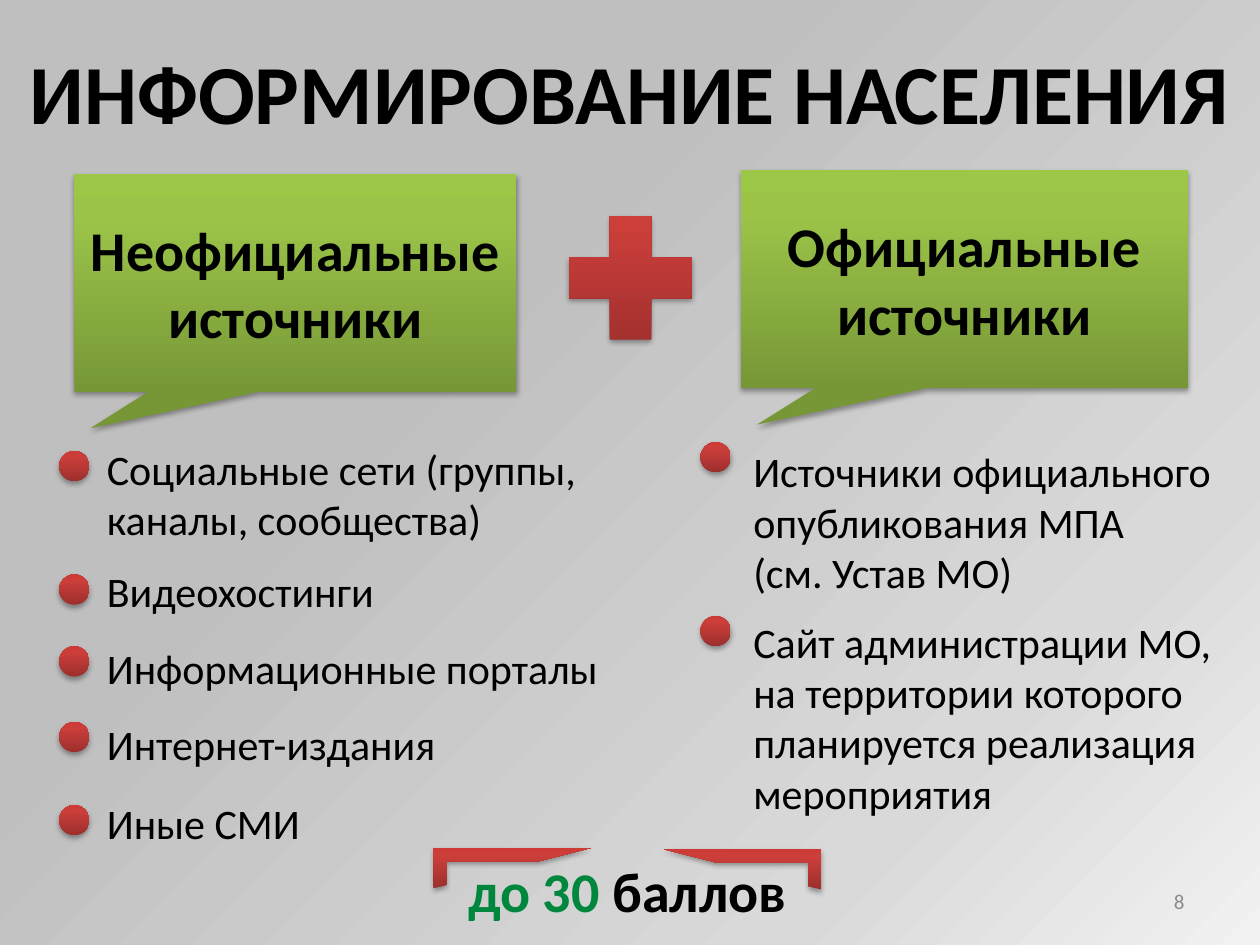
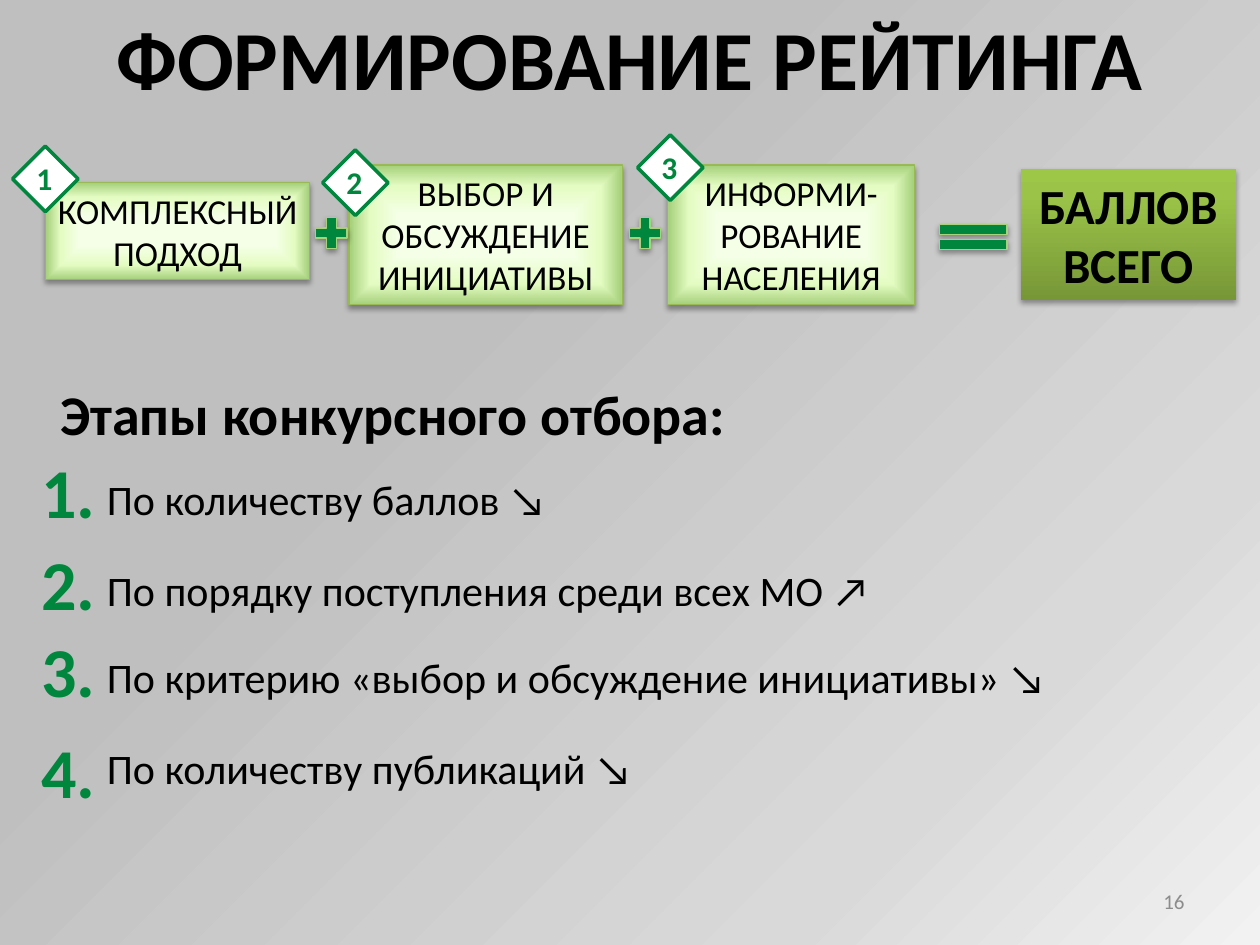
from lxml import etree
from pptx import Presentation
from pptx.dml.color import RGBColor
from pptx.enum.shapes import MSO_SHAPE as Shape
from pptx.enum.text import MSO_ANCHOR as Anchor, MSO_AUTO_SIZE as AutoSize, PP_ALIGN as Align
from pptx.oxml import parse_xml
from pptx.oxml.ns import nsdecls, qn
from pptx.util import Inches, Pt

WIDTH, HEIGHT = Inches(10), Inches(7.5)
COLUMNS, ROWS = 100, 75
FONT = "Calibri"

COLORS = {
    "ink": "000000",
    "green": "00863D",
    "page_number": "8C8C8C",
    "white": "FFFFFF",
    "leaf_edge": "98B955",
    "sign_edge": "A7D17D",
}

LINEAR = '<a:lin ang="16200000" scaled="0"/>'
RADIAL = '<a:path path="{}"><a:fillToRect {}/></a:path>'
GRADIENTS = {
    "page": ([(0, "F2F2F2"), (22, "D9D9D9"), (65, "BFBFBF")],
             RADIAL.format("circle", 'l="100000" t="100000"')),
    "red": ([(0, "9C2F2D"), (80, "CB3E3A"), (100, "CE3B37")], LINEAR),
    "olive": ([(0, "779737"), (80, "9BC348"), (100, "9DC746")], LINEAR),
    "leaf": ([(29, "F5FFE7"), (70, "E4FCC2"), (99, "A7D17D")],
             RADIAL.format("rect", 'l="50000" t="50000" r="50000" b="50000"')),
}

FORMATS = {
    "title": {"size": Pt(48), "bold": True},
    "heading": {"size": Pt(32), "bold": True},
    "total": {"size": Pt(28), "bold": True},
    "body": {"size": Pt(24), "bold": False},
    "criterion": {"size": Pt(20), "bold": False},
    "stage": {"size": Pt(40), "bold": True},
    "badge": {"size": Pt(18), "bold": True},
    "page_number": {"size": Pt(12), "bold": False},
}


def set_all(target, values):
    for name, value in values.items():
        setattr(target, name, value)


class Deck:
    def __init__(self):
        self.file = Presentation()
        set_all(self.file, {"slide_width": WIDTH, "slide_height": HEIGHT})
        self.slide = None

    def place(self, left, top, width, height):
        """Turn grid columns and rows into lengths."""
        column, row = WIDTH / COLUMNS, HEIGHT / ROWS
        return [round(n) for n in (left * column, top * row, width * column, height * row)]

    def paint_gradient(self, solid_fill, name):
        """Put a named gradient in the place of a solid fill."""
        stops, direction = GRADIENTS[name]
        marks = "".join(f'<a:gs pos="{pos * 1000}"><a:srgbClr val="{color}"/></a:gs>'
                        for pos, color in stops)
        gradient = parse_xml(f'<a:gradFill {nsdecls("a")} rotWithShape="1">'
                             f'<a:gsLst>{marks}</a:gsLst>{direction}</a:gradFill>')
        solid_fill.getparent().replace(solid_fill, gradient)

    def new_slide(self, title, title_top, number):
        self.slide = self.file.slides.add_slide(self.file.slide_layouts[5])
        self.slide.background.fill.solid()
        self.paint_gradient(self.slide.element.xpath(".//p:bgPr/a:solidFill")[0], "page")
        heading = self.slide.shapes.title
        left, top, width, height = self.place(0, title_top, 100, 9.1)
        set_all(heading, {"left": left, "top": top, "width": width, "height": height})
        self.set_text(heading.text_frame, title, "title", align=Align.CENTER)
        self.text((71.7, 69.5, 23.3, 4), str(number), "page_number", "page_number",
                  Align.RIGHT, vertical_anchor=Anchor.MIDDLE)

    def set_text(self, frame, content, style, color="ink", align=Align.LEFT, **frame_values):
        """Fill a frame; content is lines of text, or (text, color) runs of one line."""
        set_all(frame, {"word_wrap": True, "auto_size": AutoSize.NONE,
                        "vertical_anchor": Anchor.TOP, **frame_values})
        if isinstance(content, str):
            lines = [[(line, color)] for line in content.split("\n")]
        else:
            lines = [content]
        for index, runs in enumerate(lines):
            paragraph = frame.add_paragraph() if index else frame.paragraphs[0]
            paragraph.alignment = align
            for words, run_color in runs:
                run = paragraph.add_run()
                run.text = words
                set_all(run.font, {"name": FONT, **FORMATS[style]})
                run.font.color.rgb = RGBColor.from_string(COLORS[run_color])

    def text(self, box, content, style, color="ink", align=Align.LEFT, **frame_values):
        label = self.slide.shapes.add_textbox(*self.place(*box))
        self.set_text(label.text_frame, content, style, color, align, **frame_values)
        return label

    def shape(self, kind, box, fill, line=None, line_width=0.75, shadow=True,
              adjust=(), flip=False):
        figure = self.slide.shapes.add_shape(kind, *self.place(*box))
        for index, value in enumerate(adjust):
            figure.adjustments[index] = value
        figure.fill.solid()
        if fill in GRADIENTS:
            self.paint_gradient(figure.element.xpath("p:spPr/a:solidFill")[0], fill)
        else:
            figure.fill.fore_color.rgb = RGBColor.from_string(COLORS[fill])
        if line:
            figure.line.color.rgb = RGBColor.from_string(COLORS[line])
            figure.line.width = Pt(line_width)
        else:
            figure.line.fill.background()
        figure.shadow.inherit = False
        if shadow:
            self.add_shadow(figure)
        if flip:
            figure.element.xpath("p:spPr/a:xfrm")[0].set("flipH", "1")
        return figure

    def add_shadow(self, figure):
        effects = figure.element.xpath("p:spPr/a:effectLst")[0]
        outer = etree.SubElement(effects, qn("a:outerShdw"), blurRad=str(Pt(3.1)),
                                 dist=str(Pt(1.8)), dir="5400000", rotWithShape="0")
        black = etree.SubElement(outer, qn("a:srgbClr"), val=COLORS["ink"])
        etree.SubElement(black, qn("a:alpha"), val="35000")

    def panel(self, kind, box, content, style, fill, **look):
        """A filled shape with centred text."""
        figure = self.shape(kind, box, fill, **look)
        inset = Inches(0.05)
        self.set_text(figure.text_frame, content, style, align=Align.CENTER,
                      vertical_anchor=Anchor.MIDDLE, margin_left=inset, margin_right=inset)

    def bullet(self, left, top):
        self.shape(Shape.OVAL, (left, top, 2.4, 2.4), "red")

    def sign(self, kind, left, top, width):
        self.shape(kind, (left, top, width, 3.4), "green", line="sign_edge")

    def badge(self, left, top, number):
        diamond = self.shape(Shape.DIAMOND, (left, top, 5.2, 5.2), "white",
                             line="green", line_width=2, shadow=False)
        digit = self.text((left + 0.9, top + 0.55, 3.3, 4), str(number), "badge",
                          "green", word_wrap=False)
        self.slide.shapes.add_group_shape([diamond, digit])


def build_informing(deck):
    deck.new_slide("ИНФОРМИРОВАНИЕ НАСЕЛЕНИЯ", 2.7, 8)
    deck.shape(Shape.MATH_PLUS, (43.4, 15.4, 13.3, 13.3), "red", adjust=[0.246])
    for box, sources in [((58.8, 13.5, 35.5, 17.3), "Официальные\nисточники"),
                         ((5.9, 13.8, 35.1, 17.3), "Неофициальные\nисточники")]:
        deck.panel(Shape.RECTANGULAR_CALLOUT, box, sources, "heading", "olive",
                   adjust=[-0.464, 0.668])

    unofficial = [
        (35.8, 34.7, "Социальные сети (группы, каналы, сообщества)"),
        (45.6, 44.4, "Видеохостинги"),
        (51.3, 50.5, "Информационные порталы"),
        (57.3, 56.5, "Интернет-издания"),
        (63.9, 62.8, "Иные СМИ"),
    ]
    official = [
        (35.1, 34.9, "Источники официального опубликования МПА\n(см. Устав МО)"),
        (48.9, 48.4, "Сайт администрации МО, на территории которого "
                     "планируется реализация мероприятия"),
    ]
    for bullet_left, text_left, width, sources in [(4.7, 7.5, 41.7, unofficial),
                                                   (55.6, 58.8, 39.2, official)]:
        for bullet_top, text_top, source in sources:
            deck.bullet(bullet_left, bullet_top)
            deck.text((text_left, text_top, width, 5), source, "body")

    deck.text((34.4, 67.5, 30.8, 6.4), [("до 30 ", "green"), ("баллов", "ink")],
              "heading", align=Align.CENTER)
    for left, top, flip in [(34.4, 67.3, False), (52.7, 67.4, True)]:
        deck.shape(Shape.HALF_FRAME, (left, top, 12.5, 3.2), "red", flip=flip)


def build_rating(deck):
    deck.new_slide("ФОРМИРОВАНИЕ РЕЙТИНГА", 0, 16)
    criteria = [
        ((3.6, 14.5, 21, 7.7), (1, 11.6), "КОМПЛЕКСНЫЙ ПОДХОД"),
        ((27.7, 13.1, 21.7, 11.1), (25.6, 11.9), "ВЫБОР И ОБСУЖДЕНИЕ ИНИЦИАТИВЫ"),
        ((53, 13.1, 19.6, 11.1), (50.6, 10.7), "ИНФОРМИ-РОВАНИЕ НАСЕЛЕНИЯ"),
    ]
    for number, (box, corner, criterion) in enumerate(criteria, 1):
        deck.panel(Shape.RECTANGLE, box, criterion, "criterion", "leaf", line="leaf_edge")
        deck.badge(*corner, number)
    deck.panel(Shape.RECTANGLE, (81, 13.4, 17.1, 10.4), "БАЛЛОВ\nВСЕГО", "total", "olive")
    for left in (24.6, 49.5):
        deck.sign(Shape.MATH_PLUS, left, 16.8, 3.4)
    deck.sign(Shape.MATH_EQUAL, 73.6, 17.1, 7.3)

    deck.text((3.8, 29.6, 81.6, 6.4), "Этапы конкурсного отбора:", "heading")
    stages = [
        (35.1, 37.1, "По количеству баллов ↘"),
        (42.4, 44.3, "По порядку поступления среди всех МО ↗"),
        (49.3, 51.2, "По критерию «выбор и обсуждение инициативы» ↘"),
        (57.3, 58.4, "По количеству публикаций ↘"),
    ]
    for number, (number_top, stage_top, stage) in enumerate(stages, 1):
        deck.text((7.5, stage_top, 89, 5), stage, "body")
        deck.text((2.3, number_top, 7.4, 7.7), f"{number}.", "stage", "green")


def main():
    deck = Deck()
    build_informing(deck)
    build_rating(deck)
    deck.file.save("out.pptx")


if __name__ == "__main__":
    main()
